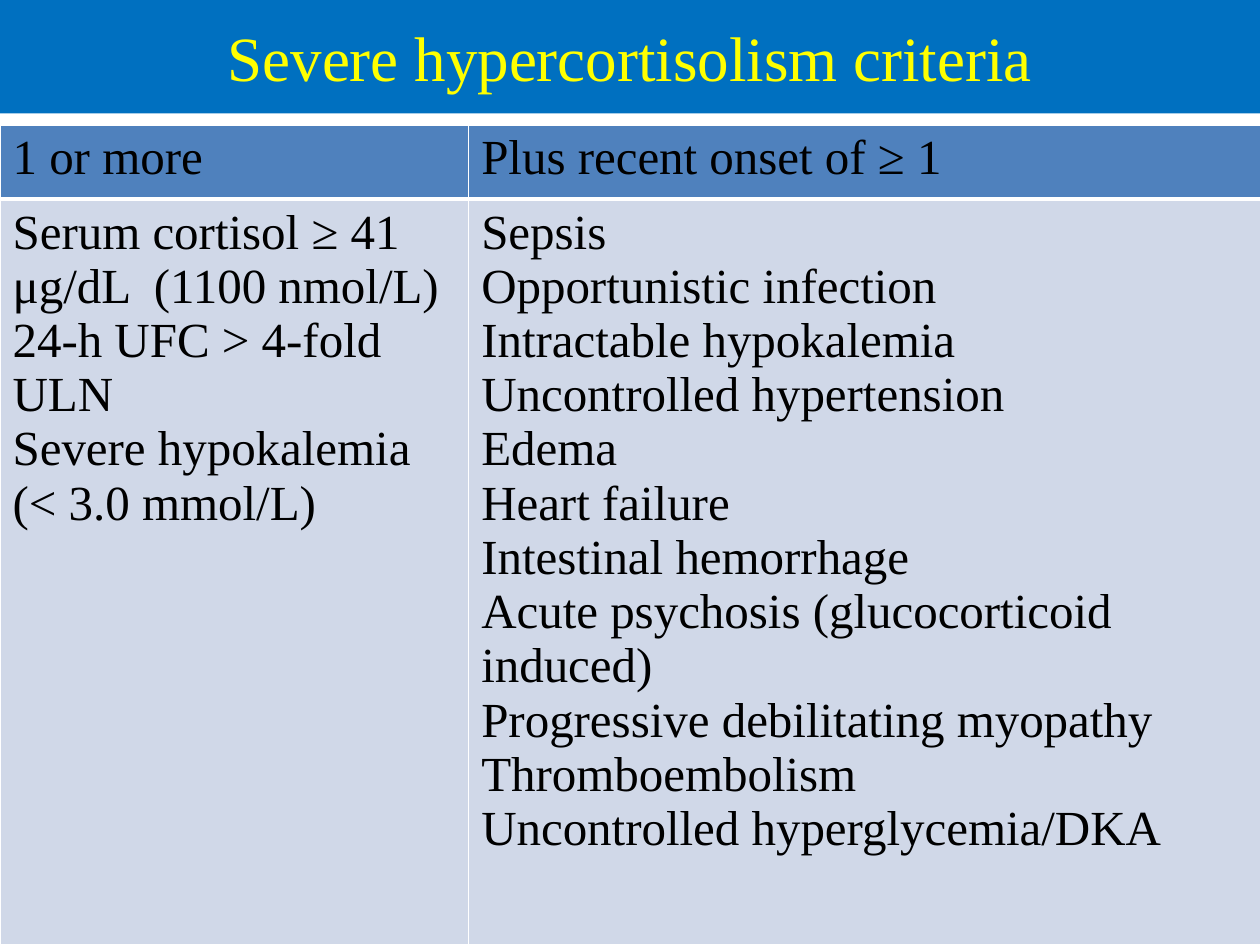
from lxml.etree import SubElement
from pptx import Presentation
from pptx.dml.color import RGBColor
from pptx.enum.shapes import MSO_SHAPE
from pptx.enum.text import MSO_ANCHOR, PP_ALIGN
from pptx.oxml.ns import qn
from pptx.util import Inches, Pt


def paint(fill, hex_color):
    fill.solid()
    fill.fore_color.rgb = RGBColor.from_string(hex_color)


class SlideBuilder:
    FONT = "Times New Roman"
    BANNER, TITLE_TEXT = "0070C0", "FFFF00"
    HEADER, BODY, TEXT, RULE = "4F81BD", "D0D8E8", "000000", "FFFFFF"

    def __init__(self, slide):
        self.slide = slide

    def add_lines(self, frame, lines, size, color, align=PP_ALIGN.LEFT):
        frame.word_wrap = True
        for index, line in enumerate(lines):
            paragraph = frame.add_paragraph() if index else frame.paragraphs[0]
            paragraph.alignment = align
            run = paragraph.add_run()
            run.text = line
            run.font.name = self.FONT
            run.font.size = Pt(size)
            run.font.bold = False
            paint(run.font.fill, color)

    def title(self, wording, width, height):
        banner = self.slide.shapes.add_shape(
            MSO_SHAPE.RECTANGLE, 0, 0, Inches(width), Inches(height))
        banner.shadow.inherit = False
        paint(banner.fill, self.BANNER)
        banner.line.fill.background()
        banner.text_frame.vertical_anchor = MSO_ANCHOR.MIDDLE
        self.add_lines(banner.text_frame, [wording], 36, self.TITLE_TEXT, PP_ALIGN.CENTER)

    def borders(self, cell, **widths):
        properties = cell._tc.get_or_add_tcPr()
        for side in "LRTB":
            line = SubElement(properties, qn(f"a:ln{side}"), w=str(Pt(widths.get(side, 1))))
            color = SubElement(line, qn("a:solidFill"))
            SubElement(color, qn("a:srgbClr"), val=self.RULE)

    def table(self, rows, top, widths, heights):
        grid = self.slide.shapes.add_table(
            len(heights), len(widths), 0, Inches(top),
            Inches(sum(widths)), Inches(sum(heights))).table
        for column, width in zip(grid.columns, widths):
            column.width = Inches(width)
        for r, (height, contents) in enumerate(zip(heights, rows)):
            grid.rows[r].height = Inches(height)
            for c, lines in enumerate(contents):
                cell = grid.cell(r, c)
                # The thick rule lies between header and body
                self.borders(cell, **({"T": 3} if r else {"B": 3}))
                paint(cell.fill, self.BODY if r else self.HEADER)
                self.add_lines(cell.text_frame, lines, 28, self.TEXT)


def main():
    deck = Presentation()
    deck.slide_width, deck.slide_height = Inches(10), Inches(7.5)
    builder = SlideBuilder(deck.slides.add_slide(deck.slide_layouts[6]))

    # Title banner
    builder.title("Severe hypercortisolism criteria", 10, 0.9)

    # Criteria table
    laboratory_criteria = [
        "Serum cortisol ≥ 41 μg/dL  (1100 nmol/L)",
        "24-h UFC > 4-fold ULN",
        "Severe hypokalemia",
        "(< 3.0 mmol/L)",
    ]
    recent_onset = [
        "Sepsis",
        "Opportunistic infection",
        "Intractable hypokalemia",
        "Uncontrolled hypertension",
        "Edema",
        "Heart failure",
        "Intestinal hemorrhage",
        "Acute psychosis (glucocorticoid induced)",
        "Progressive debilitating myopathy",
        "Thromboembolism",
        "Uncontrolled hyperglycemia/DKA",
    ]
    headings = [["1 or more"], ["Plus recent onset of ≥ 1"]]
    builder.table([headings, [laboratory_criteria, recent_onset]],
                  top=0.99, widths=[3.72, 6.32], heights=[0.59, 5.92])

    deck.save("out.pptx")


if __name__ == "__main__":
    main()
